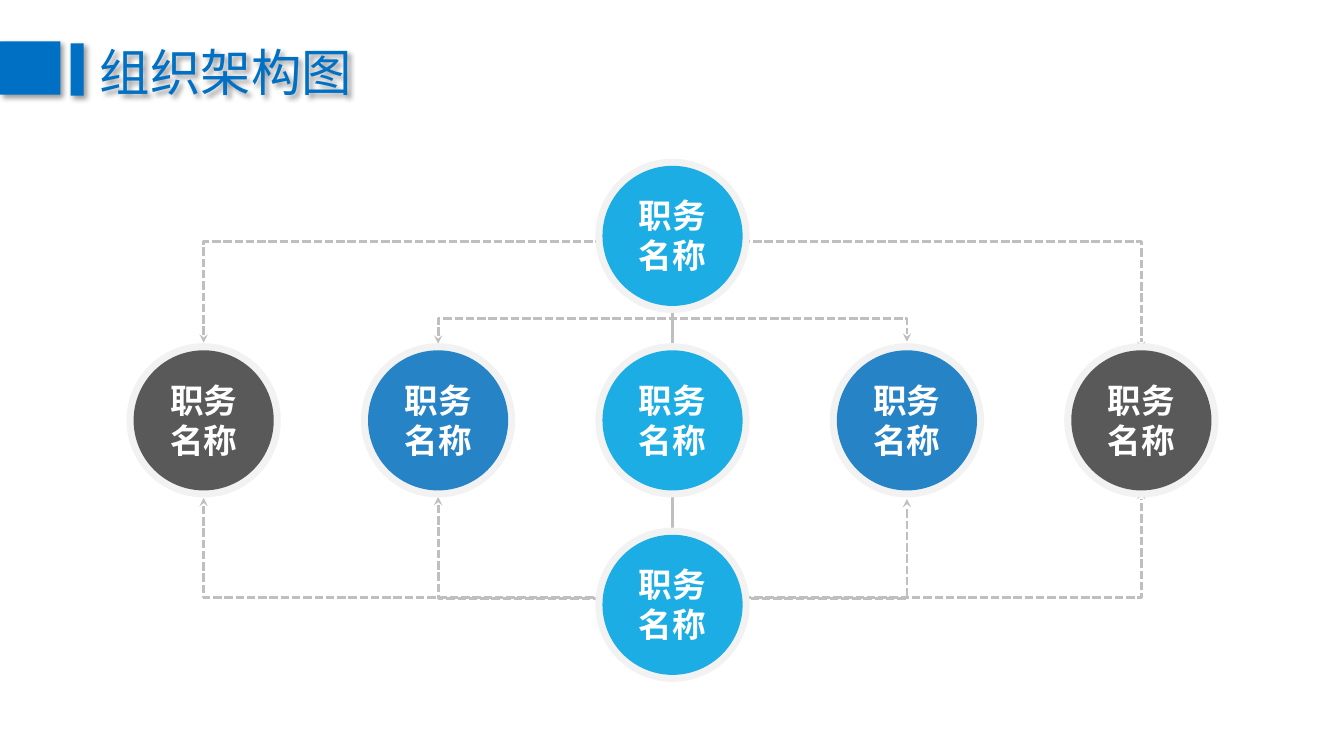
from dataclasses import dataclass

from lxml.etree import SubElement
from pptx import Presentation
from pptx.dml.color import RGBColor
from pptx.enum.dml import MSO_LINE
from pptx.enum.shapes import MSO_CONNECTOR as Link, MSO_SHAPE as Shape
from pptx.enum.text import MSO_ANCHOR as Anchor, MSO_AUTO_SIZE as AutoSize, PP_ALIGN as Align
from pptx.oxml.ns import qn
from pptx.util import Inches, Pt


@dataclass(frozen=True)
class Theme:
    title: str = "0070C4"
    line: str = "BFBFBF"
    ring: str = "F2F2F2"
    label: str = "FFFFFF"
    sky: str = "1CADE4"
    blue: str = "2683C6"
    gray: str = "595959"
    title_size: int = 36
    label_size: int = 24
    line_width: int = 2
    latin_font: str = "Calibri"
    asian_font: str = "Noto Sans CJK SC"


THEME = Theme()

# Content
TITLE = "组织架构图"
LABEL = ["职务", "名称"]
POSITIONS = [  # column, row, colour, label
    (0, 1, THEME.gray, LABEL),
    (1, 1, THEME.blue, LABEL),
    (2, 1, THEME.sky, LABEL),
    (3, 1, THEME.blue, LABEL),
    (4, 1, THEME.gray, LABEL),
    (2, 0, THEME.sky, LABEL),
    (2, 2, THEME.sky, LABEL),
]
BRACKETS = [  # first column, last column, start height, end height, crossbar height
    (0, 4, 4.94, 4.87, 5.93),
    (1, 3, 4.93, 4.95, 5.93),
    (0, 4, 3.40, 3.47, 2.40),
    (1, 3, 3.41, 3.39, 3.16),
]
TITLE_BARS = [(0, 0.41, 0.6, 0.53), (0.7, 0.43, 0.13, 0.52)]

# Grid, in inches
WIDTH, HEIGHT = 13.33, 7.5
MIDDLE_X, MIDDLE_Y = 6.67, 4.17
COLUMN_STEP, ROW_STEP = 2.325, 1.83
RING, DISC = 1.53, 1.39
LABEL_WIDTH, LABEL_HEIGHT = 1.01, 0.91


def center(column, row):
    return MIDDLE_X + (column - 2) * COLUMN_STEP, MIDDLE_Y + (row - 1) * ROW_STEP


def inches(*lengths):
    return [Inches(length) for length in lengths]


def write(box, lines, *, size, color, font, bold=False, align=Align.LEFT, wrap=True):
    frame = box.text_frame
    frame.word_wrap = wrap
    frame.auto_size = AutoSize.SHAPE_TO_FIT_TEXT
    frame.vertical_anchor = Anchor.TOP
    for number, line in enumerate(lines):
        para = frame.paragraphs[0] if number == 0 else frame.add_paragraph()
        para.alignment = align
        span = para.add_run()
        span.text = line
        span.font.size = Pt(size)
        span.font.bold = bold
        span.font.name = font
        span.font.color.rgb = RGBColor.from_string(color)
        SubElement(span.font._element, qn("a:ea"), typeface=THEME.asian_font)


def add_solid(page, kind, box, color):
    shape = page.shapes.add_shape(kind, *inches(*box))
    shape.shadow.inherit = False
    shape.fill.solid()
    shape.fill.fore_color.rgb = RGBColor.from_string(color)
    shape.line.fill.background()
    return shape


def cast_shadow(shape):
    shape.shadow.inherit = False
    effects = shape._element.spPr.find(qn("a:effectLst"))
    shadow = SubElement(effects, qn("a:outerShdw"), blurRad=str(Pt(4)), dist=str(Pt(3)),
                        dir=str(45 * 60000), algn="tl", rotWithShape="0")
    color = SubElement(shadow, qn("a:srgbClr"), val="000000")
    SubElement(color, qn("a:alpha"), val="40000")


def add_link(page, kind, start, end):
    link = page.shapes.add_connector(kind, *inches(*start, *end))
    link.line.color.rgb = RGBColor.from_string(THEME.line)
    link.line.width = Pt(THEME.line_width)
    SubElement(link._element.spPr, qn("a:effectLst"))
    return link


def add_bracket(page, first, last, start_y, end_y, bar_y):
    """Draw an elbow that leaves and arrives vertically: a level elbow turned a quarter."""
    left, right = center(first, 1)[0], center(last, 1)[0]
    drop, span = end_y - start_y, right - left
    x, y = (left + right - abs(drop)) / 2, (start_y + end_y - span) / 2
    link = add_link(page, Link.ELBOW, (x, y), (x + abs(drop), y + span))
    link.line.dash_style = MSO_LINE.SQUARE_DOT
    outline = link.line._get_or_add_ln()
    for end in ("a:headEnd", "a:tailEnd"):
        SubElement(outline, qn(end), type="stealth")

    properties = link._element.spPr
    turn = properties.find(qn("a:xfrm"))
    turn.set("rot", str((270 if drop > 0 else 90) * 60000))
    turn.set("flipH", "1")
    if drop < 0:
        turn.set("flipV", "1")
    guides = properties.find(qn("a:prstGeom")).find(qn("a:avLst"))
    bend = round((bar_y - start_y) / drop * 100000)
    SubElement(guides, qn("a:gd"), name="adj1", fmla=f"val {bend}")


def add_position(page, column, row, color, label):
    x, y = center(column, row)
    for size, fill in ((RING, THEME.ring), (DISC, color)):
        add_solid(page, Shape.OVAL, (x - size / 2, y - size / 2, size, size), fill)
    box = page.shapes.add_textbox(*inches(x - LABEL_WIDTH / 2, y - LABEL_HEIGHT / 2,
                                          LABEL_WIDTH, LABEL_HEIGHT))
    write(box, label, size=THEME.label_size, color=THEME.label,
          font=THEME.latin_font, bold=True, align=Align.CENTER)


def add_title(page):
    title = page.shapes.title
    title.left, title.top, title.width, title.height = inches(0.89, 0.36, 2.73, 0.71)
    write(title, [TITLE], size=THEME.title_size, color=THEME.title,
          font=THEME.asian_font, wrap=False)
    title.fill.background()
    bars = [add_solid(page, Shape.RECTANGLE, box, THEME.title) for box in TITLE_BARS]
    for shape in (title, *bars):
        cast_shadow(shape)


def main():
    deck = Presentation()
    deck.slide_width, deck.slide_height = inches(WIDTH, HEIGHT)
    page = deck.slides.add_slide(deck.slide_layouts[5])
    add_title(page)
    for bracket in BRACKETS:
        add_bracket(page, *bracket)
    add_link(page, Link.STRAIGHT, center(2, 0), center(2, 2))
    for position in POSITIONS:
        add_position(page, *position)
    deck.save("out.pptx")


if __name__ == "__main__":
    main()
